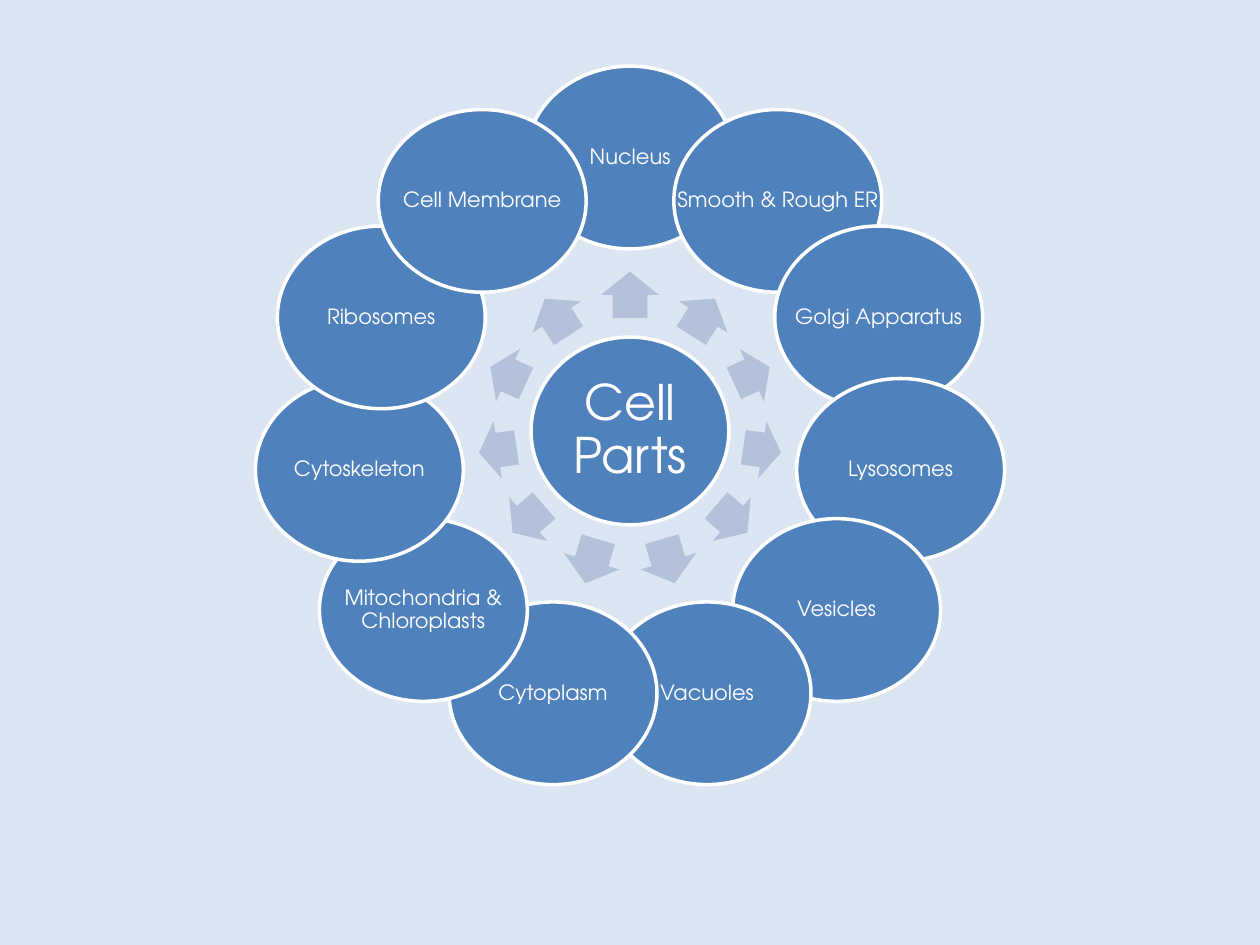
from dataclasses import dataclass
from math import cos, radians, sin

from pptx import Presentation
from pptx.dml.color import RGBColor
from pptx.enum.shapes import MSO_SHAPE
from pptx.enum.text import MSO_ANCHOR, PP_ALIGN
from pptx.slide import Slide
from pptx.util import Inches, Pt

FONT = "TeX Gyre Adventor"
BACKGROUND = "DCE6F2"
BLUE = "4F81BD"
ARROW_BLUE = "B3C1DB"
WHITE = "FFFFFF"
CENTER_X, CENTER_Y = 5.0, 3.42
RING_RADIUS = 2.17
PARTS = [
    "Nucleus",
    "Smooth & Rough ER",
    "Golgi Apparatus",
    "Lysosomes",
    "Vesicles",
    "Vacuoles",
    "Cytoplasm",
    "Mitochondria & Chloroplasts",
    "Cytoskeleton",
    "Ribosomes",
    "Cell Membrane",
]


@dataclass(frozen=True)
class BubbleStyle:
    width: float
    height: float
    size: int
    inset: float


HUB = BubbleStyle(1.57, 1.49, 28, 0.04)
PART = BubbleStyle(1.65, 1.45, 12, 0.02)


def rgb(value: str) -> RGBColor:
    return RGBColor.from_string(value)


def add_bubble(s: Slide, text: str, x: float, y: float, style: BubbleStyle) -> None:
    box = [Inches(v) for v in (x - style.width / 2, y - style.height / 2,
                               style.width, style.height)]
    sp = s.shapes.add_shape(MSO_SHAPE.OVAL, *box)
    sp.shadow.inherit = False
    sp.fill.solid()
    sp.fill.fore_color.rgb = rgb(BLUE)
    sp.line.color.rgb = rgb(WHITE)
    sp.line.width = Pt(2)

    tf = s.shapes.add_textbox(*box).text_frame
    tf.word_wrap = True
    tf.vertical_anchor = MSO_ANCHOR.MIDDLE
    tf.margin_left = tf.margin_right = Inches(style.inset)
    tf.margin_top = tf.margin_bottom = Inches(style.inset)
    p = tf.paragraphs[0]
    p.alignment = PP_ALIGN.CENTER
    p.line_spacing = 0.9
    r = p.add_run()
    r.text = text
    r.font.name = FONT
    r.font.size = Pt(style.size)
    r.font.color.rgb = rgb(WHITE)


def add_arrow(s: Slide, angle: float) -> None:
    steepness = sin(radians(angle)) ** 2
    length, height = 0.3 + 0.07 * steepness, 0.46
    radius = 1.06 + 0.02 * steepness
    x = CENTER_X + radius * cos(radians(angle))
    y = CENTER_Y + radius * sin(radians(angle))
    sp = s.shapes.add_shape(
        MSO_SHAPE.RIGHT_ARROW, Inches(x - length / 2), Inches(y - height / 2),
        Inches(length), Inches(height))
    sp.adjustments[0] = 0.6
    sp.adjustments[1] = 0.5
    sp.rotation = angle % 360
    sp.shadow.inherit = False
    sp.fill.solid()
    sp.fill.fore_color.rgb = rgb(ARROW_BLUE)
    sp.line.fill.background()


def main() -> None:
    prs = Presentation()
    prs.slide_width, prs.slide_height = Inches(10), Inches(7.5)
    s = prs.slides.add_slide(prs.slide_layouts[6])
    s.background.fill.solid()
    s.background.fill.fore_color.rgb = rgb(BACKGROUND)

    add_bubble(s, "Cell Parts", CENTER_X, CENTER_Y, HUB)
    for i, name in enumerate(PARTS):
        angle = 270 + 360 * i / len(PARTS)
        add_arrow(s, angle)
        add_bubble(s, name, CENTER_X + RING_RADIUS * cos(radians(angle)),
                   CENTER_Y + RING_RADIUS * sin(radians(angle)), PART)
    prs.save("out.pptx")


if __name__ == "__main__":
    main()
